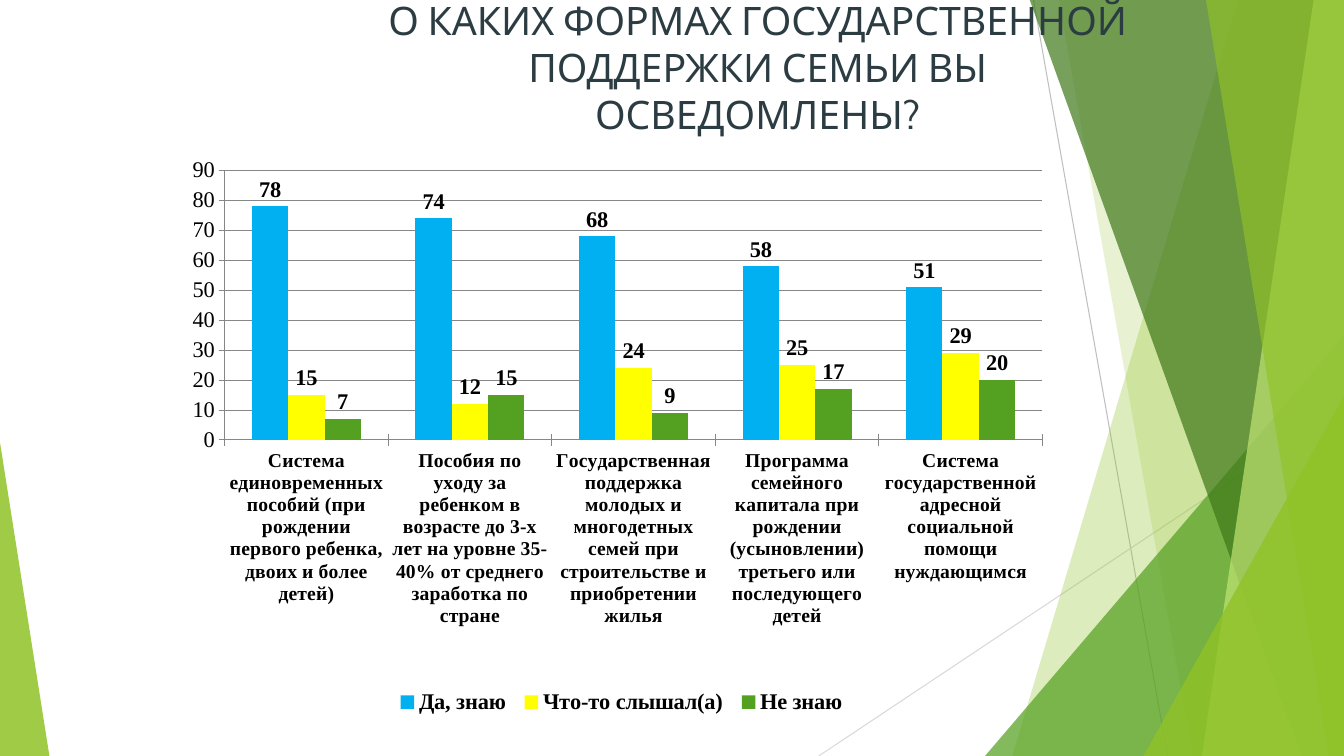
from lxml.etree import SubElement
from pptx import Presentation
from pptx.chart.data import CategoryChartData
from pptx.dml.color import RGBColor
from pptx.enum.chart import XL_CHART_TYPE as ChartType
from pptx.enum.chart import XL_LABEL_POSITION as LabelPosition
from pptx.enum.chart import XL_LEGEND_POSITION as LegendPosition
from pptx.enum.chart import XL_TICK_MARK as TickMark
from pptx.enum.shapes import MSO_CONNECTOR as Connector
from pptx.enum.shapes import MSO_SHAPE as Shape
from pptx.enum.text import MSO_ANCHOR as Anchor
from pptx.enum.text import PP_ALIGN as Align
from pptx.oxml import parse_xml
from pptx.oxml.ns import nsdecls, qn
from pptx.util import Inches, Pt

COLORS = {
    "lime": "90C226", "green": "54A021", "forest": "3F7819", "pale": "C0E474",
    "slate": "2C3C43", "blue": "00B0F0", "yellow": "FFFF00", "black": "000000",
    "axis": "878787", "line dark": "BFBFBF", "line light": "D9D9D9",
}
WIDTH, HEIGHT, TOP = 13.33, 7.5, -0.01


def rgb(name):
    return RGBColor.from_string(COLORS[name])


def place(parent, index, x, y, w, h, inner=False):
    """Give a chart part a manual layout, as shares of the chart's size."""
    for old in parent.findall(qn("c:layout")):
        parent.remove(old)
    target = '<c:layoutTarget val="inner"/>' if inner else ""
    parent.insert(index, parse_xml(
        f'<c:layout {nsdecls("c")}><c:manualLayout>{target}'
        '<c:xMode val="edge"/><c:yMode val="edge"/>'
        f'<c:x val="{x}"/><c:y val="{y}"/><c:w val="{w}"/><c:h val="{h}"/>'
        '</c:manualLayout></c:layout>'))


deck = Presentation()
deck.slide_width, deck.slide_height = Inches(WIDTH), Inches(HEIGHT)
page = deck.slides.add_slide(deck.slide_layouts[6])
shapes = page.shapes

# Thin lines behind the facets
for x1, y1, x2, y2, color in [
    (10.25, 0, 11.58, HEIGHT, "line dark"),
    (WIDTH, 4.03, 8.12, HEIGHT, "line light"),
]:
    line = shapes.add_connector(Connector.STRAIGHT, *map(Inches, (x1, y1, x2, y2)))
    line.line.color.rgb = rgb(color)
    line.line.width = Pt(0.75)
    SubElement(line._element.spPr, qn("a:effectLst"))

# Facets: a band runs from its top x to its bottom x and fills up to the right
# edge; a triangle has left, top, width and the side of its peak
for kind, geometry, color, opacity in [
    ("band", (12.28, 10.04), "lime", 30),
    ("band", (10.5, 11.83), "lime", 20),
    ("triangle", (9.77, 3.33, 3.56, 1), "green", 72),
    ("band", (10.21, 12.91), "forest", 70),
    ("band", (13.03, 11.92), "pale", 70),
    ("band", (11.96, 13.18), "lime", 65),
    ("triangle", (11.34, 3.93, 1.99, 1), "lime", 80),
    ("triangle", (0, 4.39, 0.49, 0), "lime", 85),
]:
    if kind == "band":
        top_x, bottom_x = geometry
        corners = [(WIDTH, TOP), (WIDTH, HEIGHT), (bottom_x, HEIGHT)]
        outline = shapes.build_freeform(Inches(top_x), Inches(TOP))
        outline.add_line_segments([(Inches(x), Inches(y)) for x, y in corners], close=True)
        facet = outline.convert_to_shape()
    else:
        left, top, width, peak = geometry
        facet = shapes.add_shape(
            Shape.ISOSCELES_TRIANGLE, *map(Inches, (left, top, width, HEIGHT - top)))
        facet.adjustments[0] = peak
    facet.shadow.inherit = False
    facet.line.fill.background()
    facet.fill.solid()
    facet.fill.fore_color.rgb = rgb(color)
    fill_color = facet._element.spPr.find(qn("a:solidFill"))[0]
    SubElement(fill_color, qn("a:alpha"), val=str(opacity * 1000))

# Title
title = shapes.add_textbox(*map(Inches, (3.6, 0.18, 7.83, 0.97)))
frame = title.text_frame
frame.word_wrap = True
frame.vertical_anchor = Anchor.MIDDLE
para = frame.paragraphs[0]
para.text = "О КАКИХ ФОРМАХ ГОСУДАРСТВЕННОЙ ПОДДЕРЖКИ СЕМЬИ ВЫ ОСВЕДОМЛЕНЫ?"
para.alignment = Align.CENTER
span = para.runs[0]
span.font.name, span.font.size = "Cabin", Pt(28)
span.font.color.rgb = rgb("slate")

# Chart of answers
answers = [
    ("Да, знаю", (78, 74, 68, 58, 51), "blue"),
    ("Что-то слышал(а)", (15, 12, 24, 25, 29), "yellow"),
    ("Не знаю", (7, 15, 9, 17, 20), "green"),
]
data = CategoryChartData()
data.categories = [
    "Система единовременных пособий (при рождении первого ребенка, двоих и более детей)",
    "Пособия по уходу за ребенком в возрасте до 3-х лет на уровне 35-40% от среднего заработка по стране",
    "Государственная поддержка молодых и многодетных семей при строительстве и приобретении жилья",
    "Программа семейного капитала при рождении (усыновлении) третьего или последующего детей",
    "Система государственной адресной социальной помощи нуждающимся",
]
for name, values, color in answers:
    data.add_series(name, values)
chart = shapes.add_chart(
    ChartType.COLUMN_CLUSTERED, *map(Inches, (0.98, 1.15, 9.6, 6.22)), data).chart
chart.has_title = False
chart.font.name, chart.font.size = "Times New Roman", Pt(16)
chart.font.color.rgb = rgb("black")

plot = chart.plots[0]
plot.vary_by_categories = False
plot.gap_width, plot.overlap = 150, 0
place(chart._chartSpace.chart.plotArea, 0, 0.13, 0.087, 0.845, 0.43, inner=True)

for series, (name, values, color) in zip(plot.series, answers):
    series.format.fill.solid()
    series.format.fill.fore_color.rgb = rgb(color)
    labels = series.data_labels
    labels.show_value = True
    labels.position = LabelPosition.OUTSIDE_END
    labels.font.bold = True

# Axes
value_axis, category_axis = chart.value_axis, chart.category_axis
value_axis.minimum_scale, value_axis.maximum_scale = 0, 90
value_axis.major_unit = 10
value_axis.has_major_gridlines = True
value_axis.major_gridlines.format.line.color.rgb = rgb("axis")
for axis in (value_axis, category_axis):
    axis.major_tick_mark = TickMark.CROSS
    axis.format.line.color.rgb = rgb("axis")
category_axis.tick_labels.font.size = Pt(14)
category_axis.tick_labels.font.bold = True

# Legend
chart.has_legend = True
legend = chart.legend
legend.position = LegendPosition.BOTTOM
legend.include_in_layout = False
legend.font.bold = True
place(legend._element, 1, 0.3, 0.9, 0.48, 0.07)

deck.save("out.pptx")
